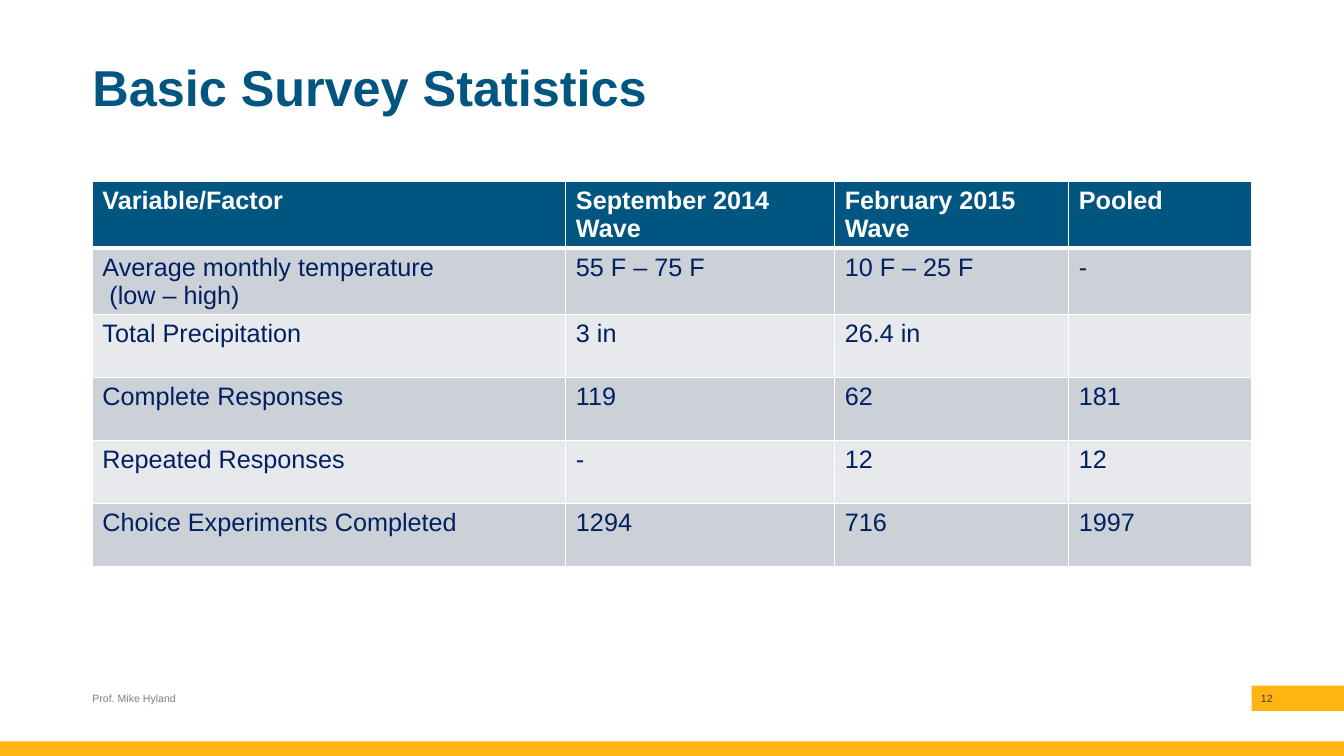
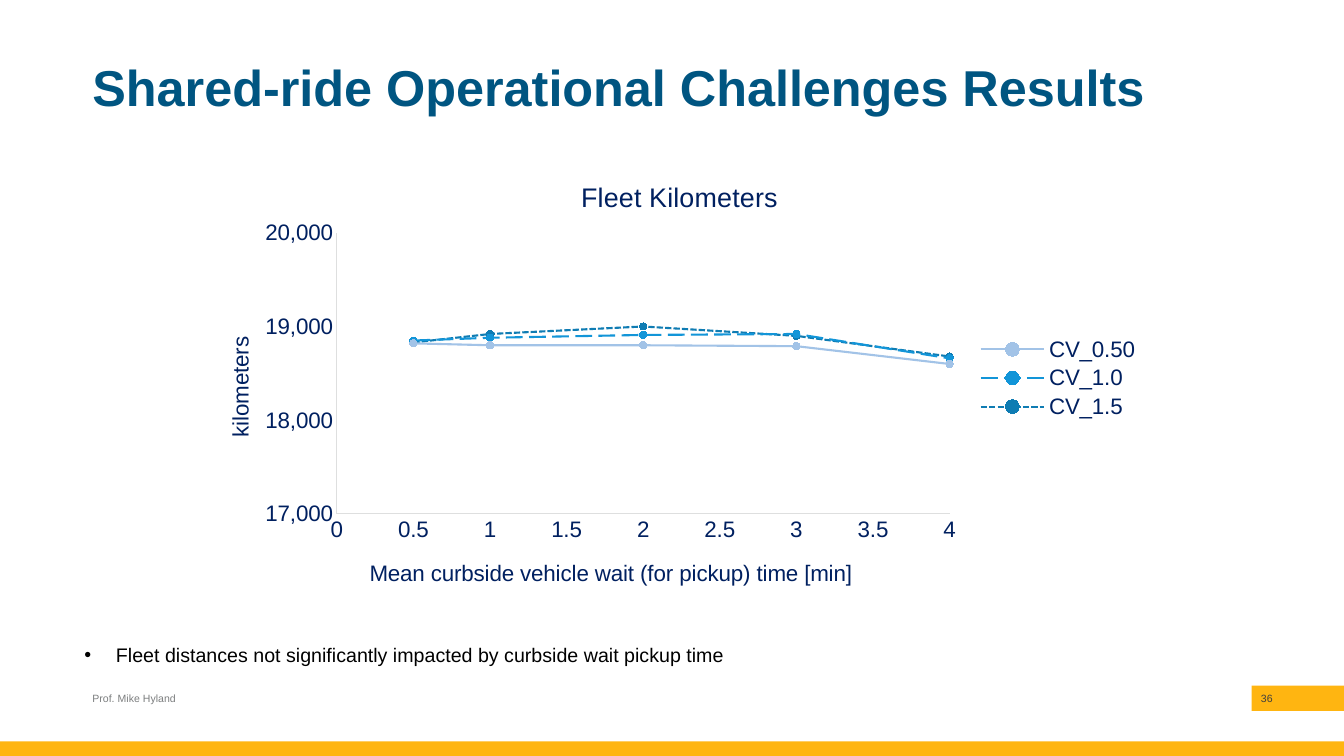
from lxml import etree
from pptx import Presentation, util as u
from pptx.chart.data import XyChartData
from pptx.dml.color import RGBColor
from pptx.enum import chart as ch, dml, shapes, text
from pptx.oxml import parse_xml
from pptx.oxml.ns import nsdecls, qn


class Theme:
    font = "Arial"
    blue, navy, gold = "005581", "002060", "FFB511"
    white, black = "FFFFFF", "000000"
    name, num, axis = "7C7E7F", "3E3F3F", "DEDFDF"
    rows = ("CCD1D8", "E7E9ED")
    head, cell, chart, cap, note, foot = 36, 18, 16, 19.2, 14, 7.5


PX = 9525  # 96 px to the inch


def write(frame, lines, size, color, bold=False, align=text.PP_ALIGN.LEFT):
    """Fill a text frame with one paragraph per line."""
    for i, line in enumerate(lines):
        par = frame.add_paragraph() if i else frame.paragraphs[0]
        par.alignment = align
        run = par.add_run()
        run.text = line
        font = run.font
        font.name, font.size, font.bold = Theme.font, u.Pt(size), bold
        font.color.rgb = RGBColor.from_string(color)


def place(node, at, **spots):
    """Give a chart part a manual layout as its child number at."""
    for old in node.findall(qn("c:layout")):
        node.remove(old)
    inner = '<c:layoutTarget val="inner"/>' if "w" in spots else ""
    modes = '<c:xMode val="edge"/><c:yMode val="edge"/>'
    vals = "".join(f'<c:{k} val="{v}"/>' for k, v in spots.items())
    node.insert(at, parse_xml(
        f'<c:layout {nsdecls("c")}><c:manualLayout>{inner}{modes}{vals}'
        '</c:manualLayout></c:layout>'))


deck = Presentation()
deck.slide_width, deck.slide_height = 1280 * PX, 720 * PX

# Shared parts: title, gold bands, footer
pages = []
for title, num in (("Basic Survey Statistics", "12"),
                   ("Shared-ride Operational Challenges Results", "36")):
    page = deck.slides.add_slide(deck.slide_layouts[5])
    pages.append(page)

    for box in ((1192, 653, 88, 24), (0, 706, 1280, 14)):
        band = page.shapes.add_shape(
            shapes.MSO_SHAPE.RECTANGLE, *(n * PX for n in box))
        band.shadow.inherit = False
        band.fill.solid()
        band.fill.fore_color.rgb = RGBColor.from_string(Theme.gold)
        band.line.fill.background()

    head = page.shapes.title
    head.left, head.top, head.width, head.height = (
        n * PX for n in (88, 62, 1104, 48))
    name = page.shapes.add_textbox(88 * PX, 653 * PX, 528 * PX, 24 * PX)
    mark = page.shapes.add_textbox(1192 * PX, 653 * PX, 29 * PX, 24 * PX)
    for item in (head, name, mark):
        frame = item.text_frame
        frame.word_wrap = True
        frame.auto_size = text.MSO_AUTO_SIZE.NONE
        frame.vertical_anchor = text.MSO_ANCHOR.MIDDLE
        frame.margin_left = frame.margin_right = 0
    write(head.text_frame, [title], Theme.head, Theme.blue, True)
    head.text_frame.paragraphs[0].line_spacing = 0.9
    write(name.text_frame, ["Prof. Mike Hyland"], Theme.foot, Theme.name)
    write(mark.text_frame, [num], Theme.foot, Theme.num,
          align=text.PP_ALIGN.CENTER)

stats, fleet = pages

# Survey table
data = (
    ("Variable/Factor", "September 2014 Wave", "February 2015 Wave", "Pooled"),
    ("Average monthly temperature\n (low – high)", "55 F – 75 F",
     "10 F – 25 F", "-"),
    ("Total Precipitation", "3 in", "26.4 in", ""),
    ("Complete Responses", "119", "62", "181"),
    ("Repeated Responses", "-", "12", "12"),
    ("Choice Experiments Completed", "1294", "716", "1997"),
)
wide = (451, 256, 223, 174)
grid = stats.shapes.add_table(len(data), len(wide), 88 * PX, 173 * PX,
                              sum(wide) * PX, 60 * len(data) * PX).table
for col, w in zip(grid.columns, wide):
    col.width = w * PX

for r, row in enumerate(data):
    top = r == 0
    fill = Theme.blue if top else Theme.rows[(r - 1) % 2]
    for c, word in enumerate(row):
        cell = grid.cell(r, c)
        if word:
            write(cell.text_frame, word.split("\n"), Theme.cell,
                  Theme.white if top else Theme.navy, top)
        cell.fill.solid()
        cell.fill.fore_color.rgb = RGBColor.from_string(fill)
        # Borders go before the fill; the header rule is thicker
        props = cell._tc.get_or_add_tcPr()
        for i, side in enumerate("LRTB"):
            thick = (top and side == "B") or (r == 1 and side == "T")
            edge = etree.Element(qn(f"a:ln{side}"),
                                 w=str(u.Pt(3 if thick else 1)))
            paint = etree.SubElement(edge, qn("a:solidFill"))
            etree.SubElement(paint, qn("a:srgbClr"), val=Theme.white)
            props.insert(i, edge)

# Fleet chart
waits = (0.5, 1, 2, 3, 4)
runs = (
    ("CV_0.50", (18820, 18800, 18800, 18790, 18600), "A2C3E7", None),
    ("CV_1.0", (18850, 18880, 18910, 18920, 18660), "1295D8",
     dml.MSO_LINE.LONG_DASH),
    ("CV_1.5", (18830, 18920, 19000, 18900, 18680), "0F7CB3",
     dml.MSO_LINE.SQUARE_DOT),
)
plot = XyChartData()
for label, vals, _, _ in runs:
    line = plot.add_series(label)
    for x, y in zip(waits, vals):
        line.add_data_point(x, y)
chart = fleet.shapes.add_chart(
    ch.XL_CHART_TYPE.XY_SCATTER_SMOOTH, 184 * PX, 144 * PX, 912 * PX,
    432 * PX, plot).chart
chart.font.name, chart.font.size = Theme.font, u.Pt(Theme.chart)
chart.font.color.rgb = RGBColor.from_string(Theme.navy)
chart.plots[0].vary_by_categories = False
chart.has_legend = True
chart.legend.position = ch.XL_LEGEND_POSITION.RIGHT
chart.legend.include_in_layout = False

for line, (_, _, color, dash) in zip(chart.plots[0].series, runs):
    rgb = RGBColor.from_string(color)
    line.smooth = True
    line.format.line.color.rgb = rgb
    line.format.line.width = u.Pt(1.5)
    if dash:
        line.format.line.dash_style = dash
    dot = line.marker
    dot.style, dot.size = ch.XL_MARKER_STYLE.CIRCLE, 5
    dot.format.fill.solid()
    dot.format.fill.fore_color.rgb = rgb
    dot.format.line.color.rgb = rgb

# Axes and chart titles
across, up = chart.category_axis, chart.value_axis
for axis, low, high, step, form in ((across, 0, 4, 0.5, "General"),
                                    (up, 17000, 20000, 1000, "#,##0")):
    axis.minimum_scale, axis.maximum_scale = low, high
    axis.major_unit = step
    axis.has_major_gridlines = False
    axis.major_tick_mark = axis.minor_tick_mark = ch.XL_TICK_MARK.NONE
    axis.tick_labels.number_format = form
    axis.tick_labels.number_format_is_linked = False
    axis.format.line.color.rgb = RGBColor.from_string(Theme.axis)
    axis.format.line.width = u.Pt(0.75)

for part, word, size, x, y in (
        (chart.chart_title, "Fleet Kilometers", Theme.cap, 0.4, 0.05),
        (across.axis_title, "Mean curbside vehicle wait (for pickup) time [min]",
         Theme.chart, 0.18, 0.89),
        (up.axis_title, "kilometers", Theme.chart, 0.03, 0.4)):
    write(part.text_frame, [word], size, Theme.navy,
          align=text.PP_ALIGN.CENTER)
    place(part.element, 1, x=x, y=y)
place(chart.element.xpath("c:chart/c:plotArea")[0], 0,
      x=0.15, y=0.18, w=0.64, h=0.62)

# Finding
note = fleet.shapes.add_textbox(71 * PX, 608 * PX, 640 * PX, 68 * PX)
note.text_frame.word_wrap = True
write(note.text_frame,
      ["Fleet distances not significantly impacted by curbside wait pickup time"],
      Theme.note, Theme.black)
props = note.text_frame.paragraphs[0]._p.get_or_add_pPr()
props.set("marL", str(30 * PX))
props.set("indent", str(-30 * PX))
tint = etree.SubElement(props, qn("a:buClr"))
etree.SubElement(tint, qn("a:srgbClr"), val=Theme.black)
etree.SubElement(props, qn("a:buFont"), typeface=Theme.font)
etree.SubElement(props, qn("a:buChar"), char="•")

deck.save("out.pptx")
